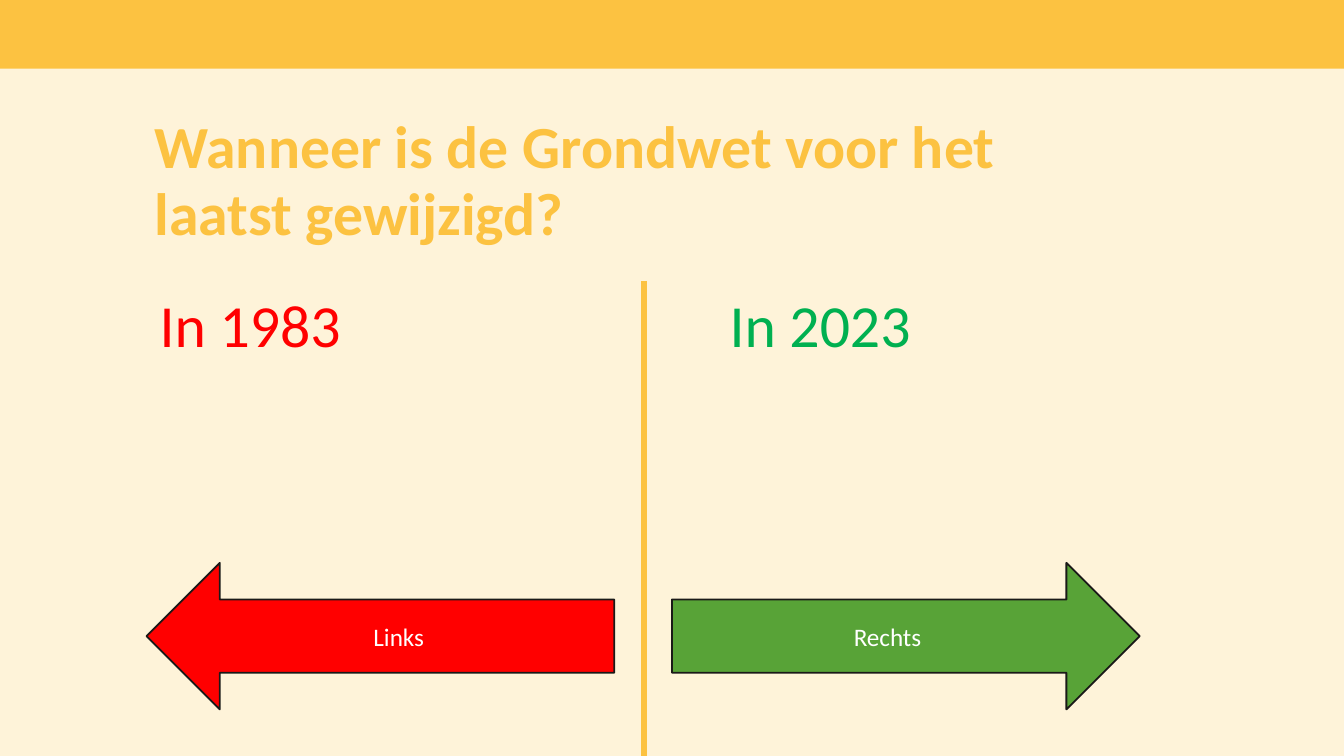
from pptx import Presentation
from pptx.dml.color import RGBColor
from pptx.enum.shapes import MSO_CONNECTOR, MSO_SHAPE
from pptx.enum.text import MSO_ANCHOR, MSO_AUTO_SIZE, PP_ALIGN
from pptx.oxml.ns import qn
from pptx.util import Cm, Pt
from lxml.etree import SubElement

COLORS = {
    "cream": "FEF3D9",
    "yellow": "FCC241",
    "red": "FF0000",
    "answer green": "00B050",
    "arrow green": "58A337",
    "outline": "1A1918",
    "white": "FFFFFF",
}


def color(name):
    return RGBColor.from_string(COLORS[name])


def write(frame, text, size, color_name, align=PP_ALIGN.LEFT):
    """Fill a text frame with one formatted paragraph and return it."""
    frame.word_wrap = True
    para = frame.paragraphs[0]
    para.text = text
    para.alignment = align
    para.font.name = "Calibri"
    para.font.size = Pt(size)
    para.font.color.rgb = color(color_name)
    return para


deck = Presentation()
deck.slide_width = Cm(25.4)
deck.slide_height = Cm(14.29)
slide = deck.slides.add_slide(deck.slide_layouts.get_by_name("Title Only"))
slide.background.fill.solid()
slide.background.fill.fore_color.rgb = color("cream")
shapes = slide.shapes

# Title
title = shapes.title
title.left, title.top, title.width, title.height = Cm(2.92), Cm(2.01), Cm(18.19), Cm(2.49)
frame = title.text_frame
frame.margin_left = frame.margin_right = frame.margin_bottom = 0
frame.margin_top = Cm(0.13)
frame.vertical_anchor = MSO_ANCHOR.TOP
frame.auto_size = MSO_AUTO_SIZE.NONE
para = write(frame, "Wanneer is de Grondwet voor het laatst gewijzigd?", 32, "yellow")
para.font.bold = True
para.line_spacing = Pt(36)

# Top band
band = shapes.add_shape(MSO_SHAPE.RECTANGLE, 0, 0, deck.slide_width, Cm(1.3))
band.shadow.inherit = False
band.fill.solid()
band.fill.fore_color.rgb = color("yellow")
band.line.fill.background()

# Divider between the two answers
divider = shapes.add_connector(
    MSO_CONNECTOR.STRAIGHT, Cm(12.17), Cm(5.31), Cm(12.17), deck.slide_height
)
divider.line.color.rgb = color("yellow")
divider.line.width = Pt(3)
SubElement(divider._element.spPr, qn("a:effectLst"))

# Answers: text, left, width, colour
answers = [
    ("In 1983", 2.77, 7.49, "red"),
    ("In 2023", 13.54, 9.75, "answer green"),
]
for text, left, width, color_name in answers:
    box = shapes.add_textbox(Cm(left), Cm(5.31), Cm(width), Cm(1.63))
    write(box.text_frame, text, 32, color_name)
    box.text_frame.auto_size = MSO_AUTO_SIZE.SHAPE_TO_FIT_TEXT

# Direction arrows: text, preset, left, colour
arrows = [
    ("Links", MSO_SHAPE.LEFT_ARROW, 2.77, "red"),
    ("Rechts", MSO_SHAPE.RIGHT_ARROW, 12.7, "arrow green"),
]
for text, preset, left, color_name in arrows:
    arrow = shapes.add_shape(preset, Cm(left), Cm(10.64), Cm(8.84), Cm(2.77))
    arrow.shadow.inherit = False
    arrow.fill.solid()
    arrow.fill.fore_color.rgb = color(color_name)
    arrow.line.color.rgb = color("outline")
    arrow.line.width = Pt(1)
    arrow.text_frame.vertical_anchor = MSO_ANCHOR.MIDDLE
    write(arrow.text_frame, text, 13.5, "white", PP_ALIGN.CENTER)

deck.save("out.pptx")
